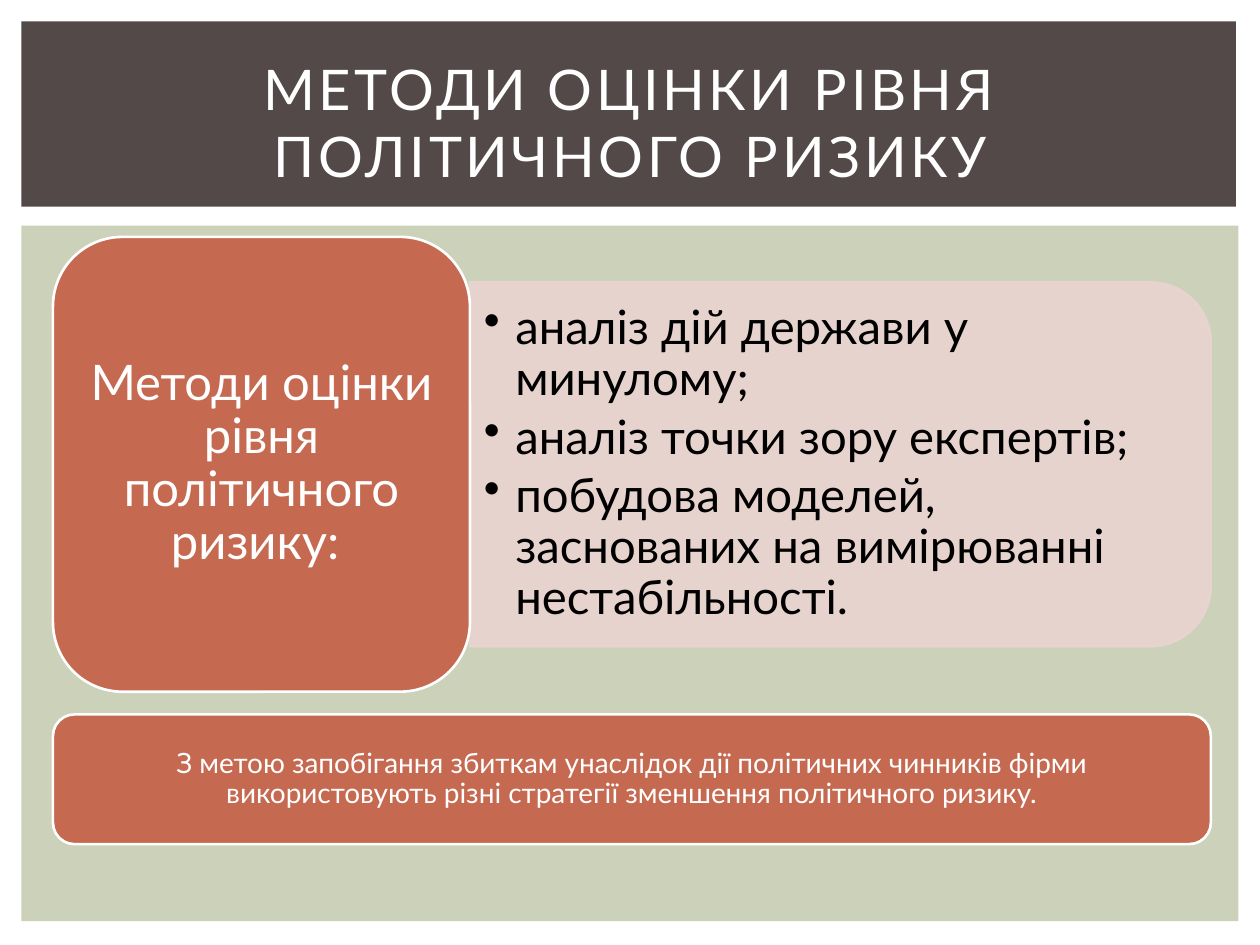
import pptx
import pptx.dml.color
import pptx.enum.shapes
import pptx.enum.text
import pptx.oxml
import pptx.oxml.ns
import pptx.util

RGBColor = pptx.dml.color.RGBColor
SHAPE = pptx.enum.shapes.MSO_SHAPE
ALIGN = pptx.enum.text.PP_ALIGN
MIDDLE = pptx.enum.text.MSO_ANCHOR.MIDDLE
Pt = pptx.util.Pt

SAGE = RGBColor(0xCC, 0xD1, 0xB9)
UMBER = RGBColor(0x53, 0x49, 0x49)
BLUSH = RGBColor(0xEA, 0xD4, 0xD0)
TERRACOTTA = RGBColor(0xC6, 0x69, 0x51)
WHITE = RGBColor(0xFF, 0xFF, 0xFF)
BLACK = RGBColor(0, 0, 0)

COLUMNS, ROWS = 100, 75
METHODS = [
    "аналіз дій держави у минулому;",
    "аналіз точки зору експертів;",
    "побудова моделей, заснованих на вимірюванні нестабільності.",
]


def apply_format(target, values):
    for name, value in values.items():
        setattr(target, name, value)


class SlideBuilder:
    font_name = "Lato"
    outline = Pt(1.5)

    def __init__(self, deck):
        self.cell_width = deck.slide_width / COLUMNS
        self.cell_height = deck.slide_height / ROWS
        self.slide = deck.slides.add_slide(deck.slide_layouts[5])

    def place(self, left, top, width, height):
        return [
            round(left * self.cell_width),
            round(top * self.cell_height),
            round(width * self.cell_width),
            round(height * self.cell_height),
        ]

    def fill_text(self, frame, lines, size, color, margins, **paragraph_format):
        side, edge = (pptx.util.Inches(margin) for margin in margins)
        apply_format(frame, {
            "word_wrap": True,
            "auto_size": pptx.enum.text.MSO_AUTO_SIZE.NONE,
            "vertical_anchor": MIDDLE,
            "margin_left": side,
            "margin_right": side,
            "margin_top": edge,
            "margin_bottom": edge,
        })
        for number, line in enumerate(lines):
            paragraph = frame.add_paragraph() if number else frame.paragraphs[0]
            apply_format(paragraph, paragraph_format)
            run = paragraph.add_run()
            run.text = line
            apply_format(run.font, {"name": self.font_name, "size": Pt(size)})
            run.font.color.rgb = color

    def block(self, kind, area, fill, line=None):
        block = self.slide.shapes.add_shape(kind, *self.place(*area))
        block.shadow.inherit = False
        block.fill.solid()
        block.fill.fore_color.rgb = fill
        if line is None:
            block.line.fill.background()
        else:
            block.line.color.rgb = line
            block.line.width = self.outline
        return block

    def title(self, area, text, size, color):
        heading = self.slide.shapes.title
        apply_format(heading, dict(zip(("left", "top", "width", "height"), self.place(*area))))
        self.fill_text(heading.text_frame, [text], size, color, (0.1, 0.05),
                       alignment=ALIGN.CENTER)
        heading.text_frame.paragraphs[0].runs[0].font._element.set("spc", "200")
        heading.element.getparent().append(heading.element)

    def card(self, area, text, size, margins):
        card = self.block(SHAPE.ROUNDED_RECTANGLE, area, TERRACOTTA, WHITE)
        self.fill_text(card.text_frame, [text], size, WHITE, margins,
                       alignment=ALIGN.CENTER, line_spacing=0.9)

    def side_panel(self, area):
        left, top, width, height = area
        upright = (left + (width - height) / 2, top + (height - width) / 2, height, width)
        panel = self.block(SHAPE.ROUND_2_SAME_RECTANGLE, upright, BLUSH, BLUSH)
        panel.rotation = 90
        for color in panel.element.spPr.iter(pptx.oxml.ns.qn("a:srgbClr")):
            color.append(pptx.oxml.parse_xml(
                f'<a:alpha {pptx.oxml.ns.nsdecls("a")} val="90000"/>'))

    def bullets(self, area, lines, size):
        listing = self.slide.shapes.add_textbox(*self.place(*area)).text_frame
        self.fill_text(listing, lines, size, BLACK, (0.11, 0.06),
                       alignment=ALIGN.LEFT, line_spacing=0.9, space_after=Pt(size * 0.15))
        indent = pptx.util.Inches(0.25)
        for paragraph in listing.paragraphs:
            properties = paragraph._p.get_or_add_pPr()
            properties.set("marL", str(indent))
            properties.set("indent", str(-indent))
            properties.append(pptx.oxml.parse_xml(
                f'<a:buChar {pptx.oxml.ns.nsdecls("a")} char="•"/>'))


def main():
    deck = pptx.Presentation()
    deck.slide_width = pptx.util.Inches(10)
    deck.slide_height = pptx.util.Inches(7.5)

    builder = SlideBuilder(deck)
    builder.block(SHAPE.RECTANGLE, (1.7, 17.9, 96.6, 55.2), SAGE)
    builder.block(SHAPE.RECTANGLE, (1.7, 1.7, 96.4, 14.7), UMBER)
    builder.side_panel((37.3, 22.4, 58.8, 28.9))
    builder.bullets((37.3, 23.8, 57.4, 26.1), METHODS, 27)
    builder.card((4.2, 18.8, 33.1, 36.1),
                 "Методи оцінки рівня політичного ризику: ", 28, (0.12, 0.06))
    builder.card((4.2, 56.7, 91.9, 10.3),
                 "З метою запобігання збиткам унаслідок дії політичних чинників фірми "
                 "використовують різні стратегії зменшення політичного ризику.", 16, (0.07, 0.03))
    builder.title((4.2, 3.9, 91.7, 11.5),
                  "МЕТОДИ ОЦІНКИ РІВНЯ ПОЛІТИЧНОГО РИЗИКУ", 32, WHITE)

    deck.save("out.pptx")


if __name__ == "__main__":
    main()
